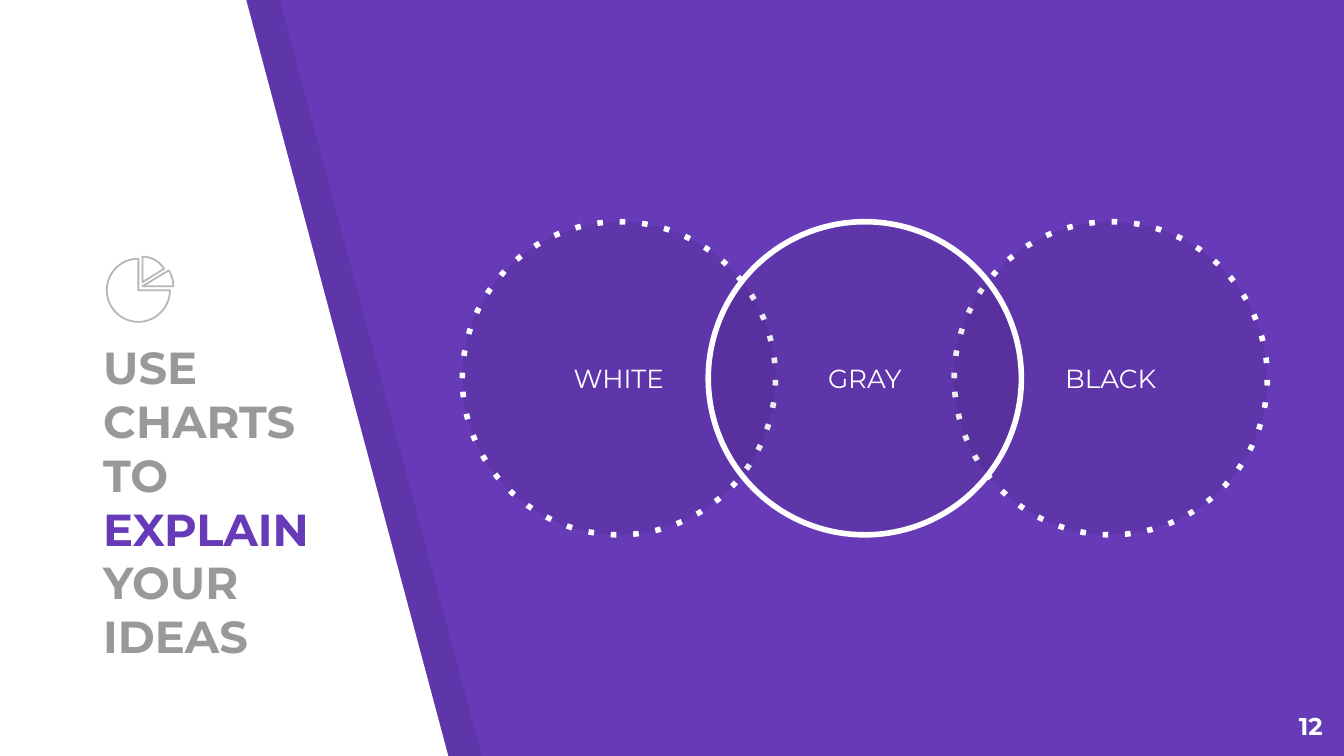
from math import cos, radians, sin

from lxml import etree
from pptx import Presentation
from pptx.dml.color import RGBColor
from pptx.enum.dml import MSO_LINE
from pptx.enum.shapes import MSO_SHAPE
from pptx.enum.text import MSO_ANCHOR, PP_ALIGN
from pptx.oxml.ns import qn
from pptx.util import Inches, Pt

OVAL = MSO_SHAPE.OVAL
DOTTED = MSO_LINE.ROUND_DOT
TOP, MIDDLE, BOTTOM = MSO_ANCHOR.TOP, MSO_ANCHOR.MIDDLE, MSO_ANCHOR.BOTTOM
LEFT, CENTER, RIGHT = PP_ALIGN.LEFT, PP_ALIGN.CENTER, PP_ALIGN.RIGHT


class Theme:
    font = "Montserrat"
    purple, white, black = "673AB7", "FFFFFF", "000000"
    gray, light_gray = "999999", "B7B7B7"
    title_size, label_size, number_size = 24, 14, 13
    ring_width, icon_width = 3, 0.96
    shade_opacity = 7


def paint(shape, fill=None, opacity=100, line=None, width=1, dotted=False):
    shape.shadow.inherit = False
    if fill:
        shape.fill.solid()
        shape.fill.fore_color.rgb = RGBColor.from_string(fill)
        if opacity < 100:
            color = shape._element.spPr.find(qn("a:solidFill"))[0]
            etree.SubElement(color, qn("a:alpha")).set("val", str(opacity * 1000))
    else:
        shape.fill.background()
    if line:
        shape.line.color.rgb = RGBColor.from_string(line)
        shape.line.width = Pt(width)
        if dotted:
            # The preset "dot" has wider gaps than the enum's round dot.
            shape.line.dash_style = DOTTED
            shape._element.spPr.find(".//" + qn("a:prstDash")).set("val", "dot")
    else:
        shape.line.fill.background()


def write(shape, *parts, size, bold=False, align=LEFT, anchor=TOP):
    """Fill the shape with one paragraph made of (text, color) parts."""
    frame = shape.text_frame
    frame.word_wrap = True
    frame.vertical_anchor = anchor
    frame.margin_left = frame.margin_right = cell
    frame.margin_top = frame.margin_bottom = cell
    paragraph = frame.paragraphs[0]
    paragraph.alignment = align
    for text, color in parts:
        run = paragraph.add_run()
        run.text = text
        run.font.name = Theme.font
        run.font.size = Pt(size)
        run.font.bold = bold
        run.font.color.rgb = RGBColor.from_string(color)


deck = Presentation()
deck.slide_width, deck.slide_height = Inches(10), Inches(5.625)
cell = deck.slide_width // 100  # square grid: 100 columns, 56.25 rows

slide = deck.slides.add_slide(deck.slide_layouts[6])
slide.background.fill.solid()
slide.background.fill.fore_color.rgb = RGBColor.from_string(Theme.purple)
shapes = slide.shapes

# Slanted side panel with its shade, then the pie icon's three slices
panel = [(-0.2, -0.1), (-0.2, 56.4), (33.4, 56.4), (18.3, -0.1)]
shade = [(x + 2.5, y) for x, y in panel]
outlines = [
    (shade, dict(fill=Theme.black, opacity=Theme.shade_opacity)),
    (panel, dict(fill=Theme.white)),
]
for center_x, center_y, radius, start, end in [
    (10.3, 21.6, 2.35, 0, 270),
    (10.6, 21, 1.9, -90, -32),
    (10.6, 21.3, 2.3, -31, 0),
]:
    steps = max(8, (end - start) // 6)
    angles = [radians(start + (end - start) * i / steps) for i in range(steps + 1)]
    arc = [(center_x + radius * cos(a), center_y + radius * sin(a)) for a in angles]
    outlines.append(
        ([(center_x, center_y)] + arc,
         dict(line=Theme.light_gray, width=Theme.icon_width))
    )

for points, look in outlines:
    corners = [(round(x * cell), round(y * cell)) for x, y in points]
    builder = shapes.build_freeform(*corners[0])
    builder.add_line_segments(corners[1:], close=True)
    paint(builder.convert_to_shape(), **look)

title = shapes.add_textbox(*(round(n * cell) for n in (6.7, 25, 17.6, 25.3)))
write(title, ("USE CHARTS TO ", Theme.gray), ("EXPLAIN", Theme.purple),
      (" YOUR IDEAS", Theme.gray),
      size=Theme.title_size, bold=True, anchor=BOTTOM)

# Overlapping rings, the solid middle one in front
diameter, first_left, ring_step = 23.3, 34.4, 18.3
for label, position, dotted in [
    ("WHITE", 0, True), ("BLACK", 2, True), ("GRAY", 1, False),
]:
    left = first_left + position * ring_step
    ring = shapes.add_shape(
        OVAL, *(round(n * cell) for n in (left, 16.5, diameter, diameter)))
    paint(ring, fill=Theme.black, opacity=Theme.shade_opacity,
          line=Theme.white, width=Theme.ring_width, dotted=dotted)
    write(ring, (label, Theme.white), size=Theme.label_size,
          align=CENTER, anchor=MIDDLE)

page_number = shapes.add_textbox(*(round(n * cell) for n in (93.4, 51.9, 6, 4.3)))
write(page_number, ("12", Theme.white), size=Theme.number_size,
      bold=True, align=RIGHT)

deck.save("out.pptx")
